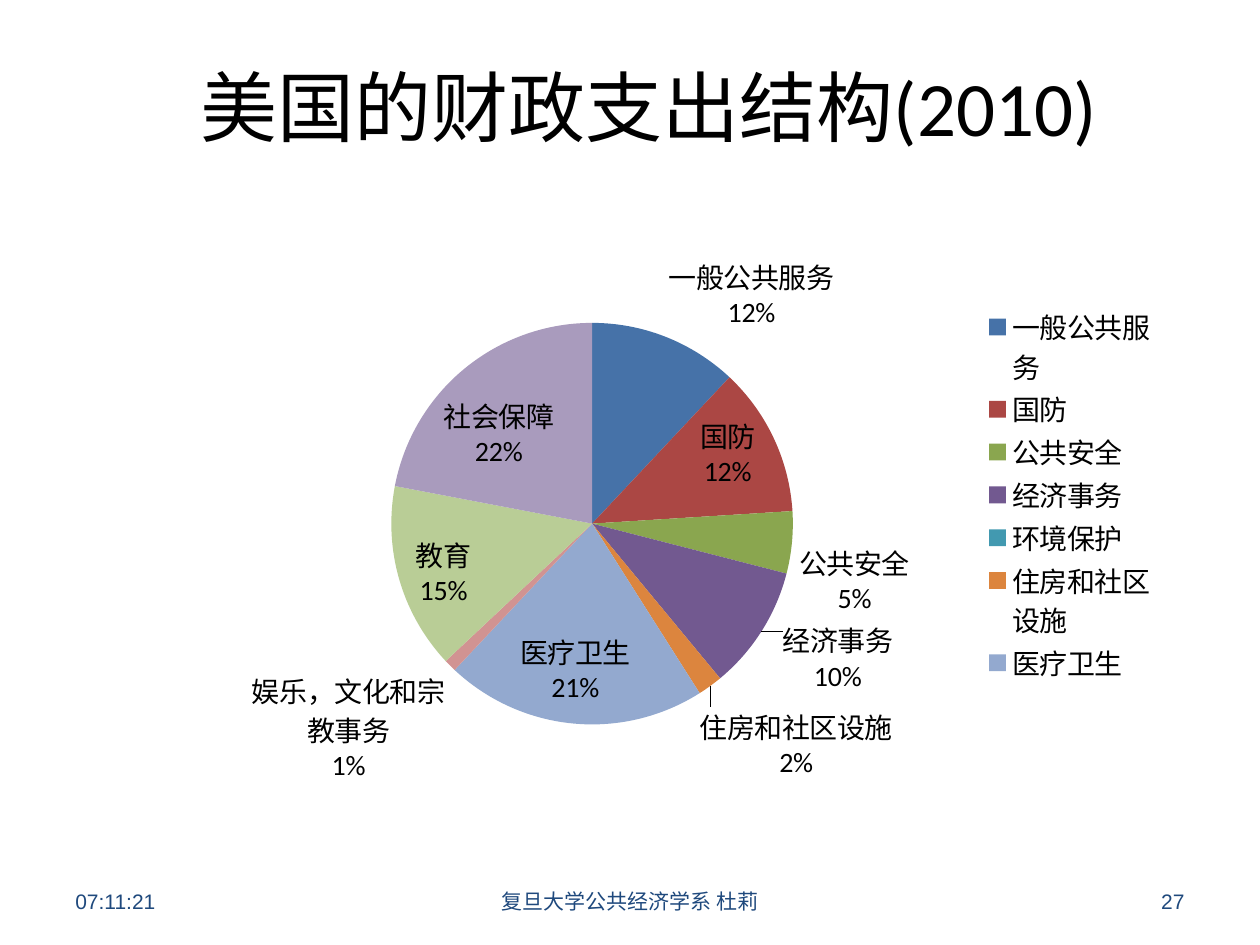
import pptx
import pptx.chart.data
import pptx.dml.color
import pptx.enum.chart
import pptx.enum.text
import pptx.oxml
import pptx.oxml.ns
import pptx.util

Cm = pptx.util.Cm
Pt = pptx.util.Pt
Align = pptx.enum.text.PP_ALIGN

PARTS = [
    ("一般公共服务", 12, "4672A8"),
    ("国防", 12, "AB4744"),
    ("公共安全", 5, "8AA64F"),
    ("经济事务", 10, "725990"),
    ("环境保护", 0, "4299B0"),
    ("住房和社区设施", 2, "DC853E"),
    ("医疗卫生", 21, "93A9CF"),
    ("娱乐，文化和宗教事务", 1, "D19392"),
    ("教育", 15, "B9CD96"),
    ("社会保障", 22, "A99BBD"),
]
SHOWN = 7


def color(code):
    return pptx.dml.color.RGBColor.from_string(code)


def write(slide, text, box, size=12, face="Arial", ink="1F497D", align=Align.LEFT):
    frame = slide.shapes.add_textbox(*map(Cm, box)).text_frame
    frame.word_wrap = True
    frame.vertical_anchor = pptx.enum.text.MSO_ANCHOR.MIDDLE
    para = frame.paragraphs[0]
    para.alignment = align
    run = para.add_run()
    run.text = text
    run.font.size = Pt(size)
    run.font.name = face
    run.font.color.rgb = color(ink)


def node(tag, body):
    space = pptx.oxml.ns.nsdecls("c")
    return pptx.oxml.parse_xml(f"<c:{tag} {space}>{body}</c:{tag}>")


def hide(tag, idx):
    return node(tag, f'<c:idx val="{idx}"/><c:delete val="1"/>')


def layout(x, y, w, h, inner=False):
    target = '<c:layoutTarget val="inner"/>' if inner else ""
    return node(
        "layout",
        f'<c:manualLayout>{target}<c:xMode val="edge"/><c:yMode val="edge"/>'
        f'<c:x val="{x}"/><c:y val="{y}"/><c:w val="{w}"/><c:h val="{h}"/>'
        "</c:manualLayout>",
    )


def drop(parent):
    for old in parent.findall(pptx.oxml.ns.qn("c:layout")):
        parent.remove(old)


def pie(slide, box):
    data = pptx.chart.data.CategoryChartData()
    data.categories = [part[0] for part in PARTS]
    data.add_series("Series 1", [part[1] for part in PARTS])
    kind = pptx.enum.chart.XL_CHART_TYPE.PIE
    chart = slide.shapes.add_chart(kind, *map(Cm, box), data).chart
    chart.has_title = False
    chart.font.size = Pt(16)
    chart.font.name = "Calibri"
    chart.font.color.rgb = color("000000")

    chart.has_legend = True
    legend = chart.legend
    legend.position = pptx.enum.chart.XL_LEGEND_POSITION.RIGHT
    legend.include_in_layout = False
    legend.font.size = Pt(16)
    key = legend._element
    drop(key)
    key.insert(1, layout(0.8, 0.17, 0.16, 0.6))
    for idx in reversed(range(SHOWN, len(PARTS))):
        key.insert(1, hide("legendEntry", idx))

    plot = chart.plots[0]
    plot.vary_by_categories = True
    area = plot._element.getparent()
    drop(area)
    area.insert(0, layout(0.24, 0.2, 0.38, 0.63, inner=True))

    series = plot.series[0]
    labels = series.data_labels
    labels.show_value = False
    labels.show_category_name = True
    labels.show_percentage = True
    labels.number_format = "0%"
    labels.number_format_is_linked = False
    labels.position = pptx.enum.chart.XL_LABEL_POSITION.BEST_FIT
    labels.font.size = Pt(16)
    tags = labels._element
    tags.find(pptx.oxml.ns.qn("c:showBubbleSize")).addnext(node("separator", "\n"))
    for idx, (name, value, fill) in enumerate(PARTS):
        point = series.points[idx].format
        point.fill.solid()
        point.fill.fore_color.rgb = color(fill)
        point.line.fill.background()
        if value == 0:
            tags.insert(0, hide("dLbl", idx))


def footer(slide, left, top, width, height):
    side = 5.92
    mid = 8.05
    write(slide, "07:11:21", (left, top, side, height))
    write(slide, "复旦大学公共经济学系 杜莉",
          (left + (width - mid) / 2, top, mid, height), align=Align.CENTER)
    write(slide, "27", (left + width - side, top, side, height), align=Align.RIGHT)


deck = pptx.Presentation()
deck.slide_width = Cm(25.4)
deck.slide_height = Cm(19.05)
page = deck.slides.add_slide(deck.slide_layouts[6])
write(page, "美国的财政支出结构(2010)", (3.18, 1.07, 19.79, 2.11),
      size=44, face="Calibri", ink="000000", align=Align.CENTER)
pie(page, (2.74, 3.94, 21.39, 12.85))
footer(page, 1.27, 17.65, 22.86, 1.02)
deck.save("out.pptx")
